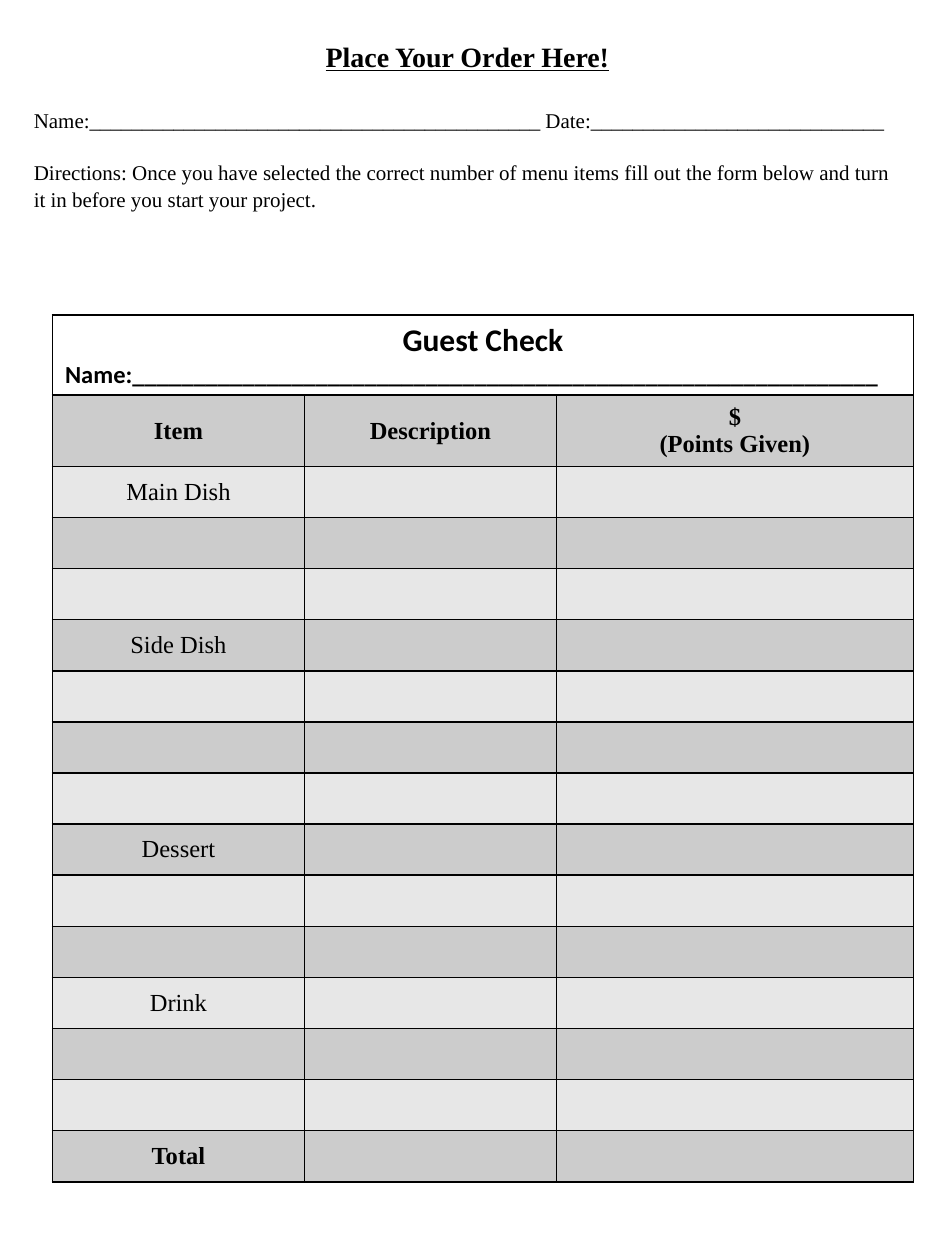
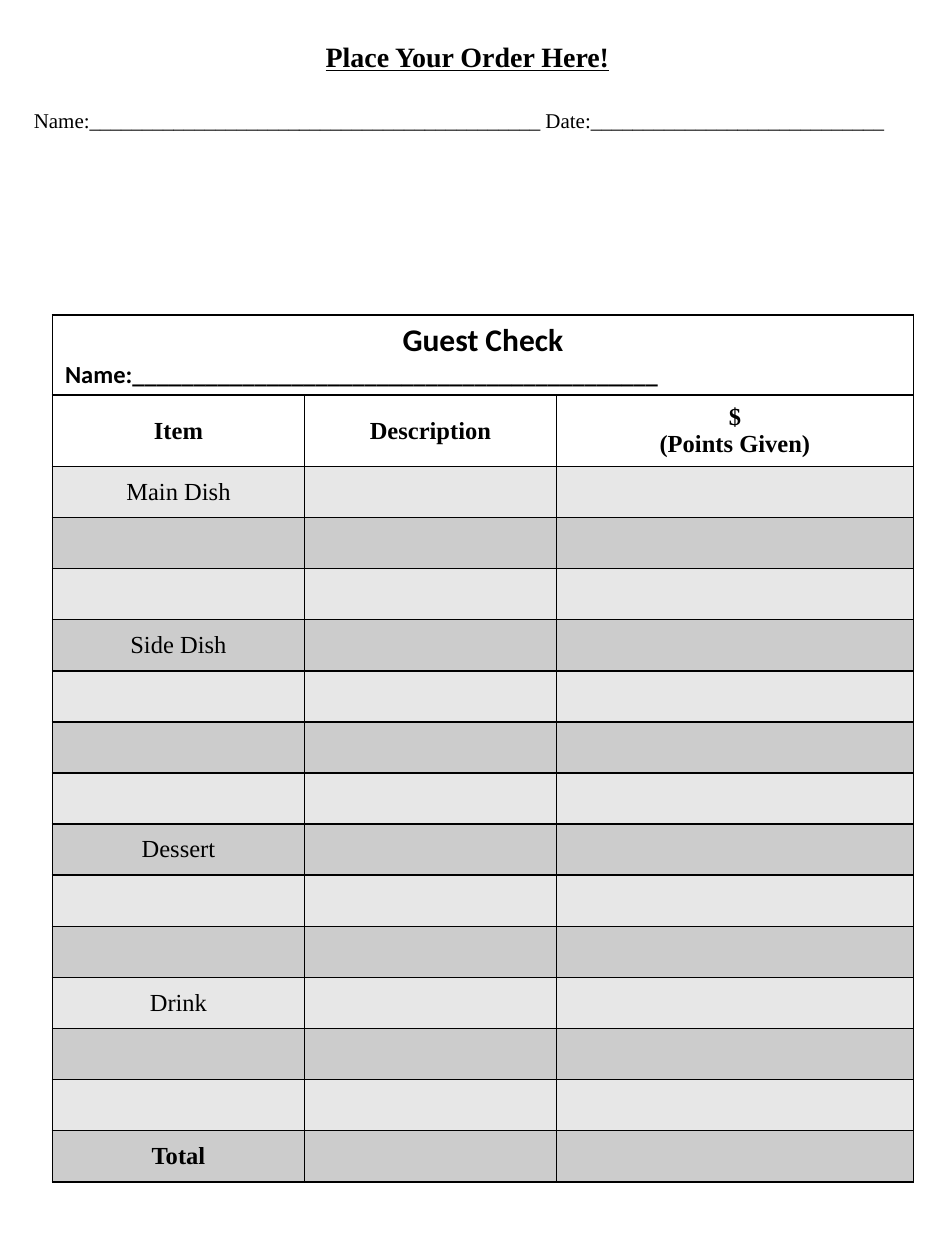
from lxml import etree
from pptx import Presentation
from pptx.dml.color import RGBColor
from pptx.enum.text import MSO_ANCHOR as ANCHOR, PP_ALIGN as ALIGN
from pptx.oxml.ns import qn
from pptx.util import Pt

SERIF, SANS = "Times New Roman", "Calibri"
BLACK, WHITE, LIGHT, DARK = "000000", "FFFFFF", "E7E7E7", "CCCCCC"

TITLE = "Place Your Order Here!"
NAME_AND_DATE = "Name:" + "_" * 43 + " Date:" + "_" * 28
DIRECTIONS = ("Directions: Once you have selected the correct number of menu items "
              "fill out the form below and turn it in before you start your project.")
CHECK_TITLE = "Guest Check"
HEADINGS = [["Item"], ["Description"], ["$", "(Points Given)"]]
COURSES = [("Main Dish", 3), ("Side Dish", 4), ("Dessert", 3), ("Drink", 3), ("Total", 1)]
FORMS = [
    {"directions": [DIRECTIONS], "box_height": 147.6, "name_blanks": 61, "heading_fill": DARK},
    {"directions": [], "box_height": 118.8, "name_blanks": 43, "heading_fill": WHITE},
]

BOX_LEFT, BOX_TOP, BOX_WIDTH = 12.24, 18, 509.76
LINE_SPACING = 1.05
TABLE_LEFT, TABLE_TOP = 30, 180
COL_WIDTHS = [144, 144, 204]
CHECK_HEIGHT, HEADING_HEIGHT, ITEM_HEIGHT = 45.7, 40.7, 29.2

TITLE_FONT = {"name": SERIF, "size": Pt(16), "bold": True, "underline": True}
BODY_FONT = {"name": SERIF, "size": Pt(12), "bold": False}
CHECK_FONT = {"name": SANS, "size": Pt(18), "bold": True}
CHECK_NAME_FONT = {"name": SANS, "size": Pt(14), "bold": True}
HEADING_FONT = {"name": SERIF, "size": Pt(14), "bold": True}
ITEM_FONT = {"name": SERIF, "size": Pt(14), "bold": False}


def color(hex_string):
    return RGBColor.from_string(hex_string)


def write(tf, lines):
    """Fill a text frame from (text, font, paragraph format) lines."""
    for i, (text, font, layout) in enumerate(lines):
        p = tf.add_paragraph() if i else tf.paragraphs[0]
        for key, value in layout.items():
            setattr(p, key, value)
        r = p.add_run()
        r.text = text
        for key, value in font.items():
            setattr(r.font, key, value)
        r.font.color.rgb = color(BLACK)


def add_borders(cell):
    tc_pr = cell._tc.get_or_add_tcPr()
    for i, side in enumerate(("lnL", "lnR", "lnT", "lnB")):
        ln = etree.Element(qn(f"a:{side}"), w=str(Pt(1)))
        fill = etree.SubElement(ln, qn("a:solidFill"))
        etree.SubElement(fill, qn("a:srgbClr"), val=BLACK)
        tc_pr.insert(i, ln)


def fill_row(table, row, fill, contents=()):
    for cell in table.rows[row].cells:
        cell.fill.solid()
        cell.fill.fore_color.rgb = color(fill)
        cell.vertical_anchor = ANCHOR.MIDDLE
        add_borders(cell)
    for col, lines in enumerate(contents):
        write(table.cell(row, col).text_frame, lines)


def add_instructions(s, form):
    box = s.shapes.add_textbox(Pt(BOX_LEFT), Pt(BOX_TOP), Pt(BOX_WIDTH), Pt(form["box_height"]))
    tf = box.text_frame
    tf.word_wrap = True
    left = {"alignment": ALIGN.LEFT, "line_spacing": LINE_SPACING}
    lines = [(TITLE, TITLE_FONT, {"alignment": ALIGN.CENTER, "line_spacing": LINE_SPACING}),
             (NAME_AND_DATE, BODY_FONT, {**left, "space_before": Pt(19.3)})]
    lines += [(text, BODY_FONT, {**left, "space_before": Pt(14.5)}) for text in form["directions"]]
    write(tf, lines)


def add_guest_check(s, form):
    items = [name if i == 0 else "" for name, count in COURSES for i in range(count)]
    heights = [CHECK_HEIGHT, HEADING_HEIGHT] + [ITEM_HEIGHT] * len(items)
    table = s.shapes.add_table(len(heights), len(COL_WIDTHS), Pt(TABLE_LEFT), Pt(TABLE_TOP),
                               Pt(sum(COL_WIDTHS)), Pt(sum(heights))).table
    table.first_row = table.horz_banding = False
    for col, width in zip(table.columns, COL_WIDTHS):
        col.width = Pt(width)
    for row, height in zip(table.rows, heights):
        row.height = Pt(height)

    center = {"alignment": ALIGN.CENTER}
    table.cell(0, 0).merge(table.cell(0, len(COL_WIDTHS) - 1))
    fill_row(table, 0, WHITE, [[
        (CHECK_TITLE, CHECK_FONT, center),
        ("Name:" + "_" * form["name_blanks"], CHECK_NAME_FONT, {"alignment": ALIGN.LEFT})]])
    fill_row(table, 1, form["heading_fill"],
             [[(text, HEADING_FONT, center) for text in lines] for lines in HEADINGS])
    for i, item in enumerate(items):
        font = HEADING_FONT if item == "Total" else ITEM_FONT
        fill_row(table, i + 2, DARK if i % 2 else LIGHT,
                 [[(item, font, center)]] if item else ())


def main():
    prs = Presentation()
    prs.slide_width, prs.slide_height = Pt(540), Pt(720)
    for form in FORMS:
        s = prs.slides.add_slide(prs.slide_layouts[6])
        add_instructions(s, form)
        add_guest_check(s, form)
    prs.save("out.pptx")


if __name__ == "__main__":
    main()
